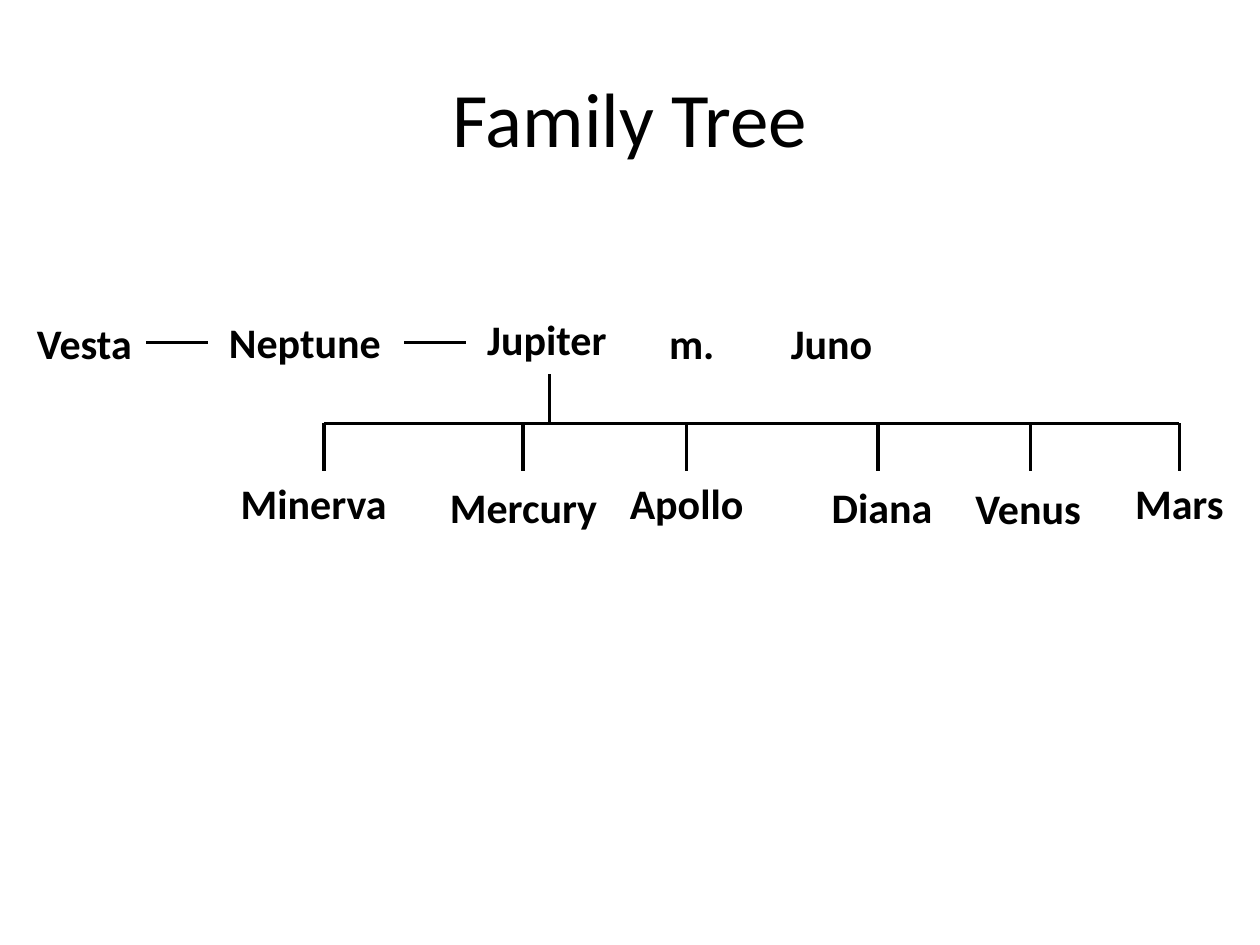
from dataclasses import dataclass

from lxml import etree
from pptx import Presentation
from pptx.dml.color import RGBColor
from pptx.enum.shapes import MSO_CONNECTOR
from pptx.enum.text import MSO_ANCHOR, MSO_AUTO_SIZE, PP_ALIGN
from pptx.oxml.ns import qn
from pptx.util import Inches, Pt

LINE = MSO_CONNECTOR.STRAIGHT
TOP, MIDDLE = MSO_ANCHOR.TOP, MSO_ANCHOR.MIDDLE
CENTER = PP_ALIGN.CENTER
GROW = MSO_AUTO_SIZE.SHAPE_TO_FIT_TEXT


@dataclass(frozen=True)
class Theme:
    font: str = "Calibri"
    ink: RGBColor = RGBColor(0, 0, 0)
    title: int = 44
    name: int = 24
    rule: int = 2


THEME = Theme()
WIDE, HIGH = 10, 7.5

# Content: name, left, top, width of its label
TITLE = "Family Tree"
ELDERS = [
    ("Vesta", 0, 2.47, 1.34),
    ("Neptune", 1.65, 2.46, 1.54),
    ("Jupiter", 3.67, 2.44, 1.34),
    ("m.", 4.82, 2.47, 1.34),
    ("Juno", 5.93, 2.47, 1.34),
]
# The last number is where the child's branch drops from the bar
CHILDREN = [
    ("Minerva", 1.73, 3.74, 1.52, 2.57),
    ("Mercury", 3.37, 3.77, 1.57, 4.15),
    ("Apollo", 4.78, 3.74, 1.34, 5.45),
    ("Diana", 6.33, 3.77, 1.34, 6.97),
    ("Venus", 7.49, 3.78, 1.34, 8.18),
    ("Mars", 8.69, 3.74, 1.34, 9.36),
]

# Levels of the tree
LABEL = 0.5
ELDER_Y, STEM_Y, BAR_Y, CHILD_Y = 2.72, 2.97, 3.36, 3.74
STEM_X = 4.36
TIES, TIE = (1.16, 3.21), 0.49

deck = Presentation()
deck.slide_width, deck.slide_height = Inches(WIDE), Inches(HIGH)
slide = deck.slides.add_slide(deck.slide_layouts[6])


def write(text, left, top, width, height=LABEL, size=THEME.name,
          bold=True, anchor=TOP, fit=GROW):
    box = slide.shapes.add_textbox(*map(Inches, (left, top, width, height)))
    frame = box.text_frame
    frame.word_wrap = True
    frame.vertical_anchor = anchor
    if fit is not None:
        frame.auto_size = fit
    par = frame.paragraphs[0]
    par.alignment = CENTER
    run = par.add_run()
    run.text = text
    font = run.font
    font.name, font.size, font.bold = THEME.font, Pt(size), bold
    font.color.rgb = THEME.ink


def draw(x1, y1, x2, y2):
    line = slide.shapes.add_connector(LINE, *map(Inches, (x1, y1, x2, y2)))
    line.line.color.rgb = THEME.ink
    line.line.width = Pt(THEME.rule)
    props = line.element.find(qn("p:spPr"))
    etree.SubElement(props, qn("a:effectLst"))


# Title
write(TITLE, WIDE * 0.05, HIGH * 0.04, WIDE * 0.9, 1.25,
      size=THEME.title, bold=False, anchor=MIDDLE, fit=None)

# Names
for name, left, top, width in ELDERS:
    write(name, left, top, width)
for name, left, top, width, drop in CHILDREN:
    write(name, left, top, width)

# Ties between siblings
for x in TIES:
    draw(x, ELDER_Y, x + TIE, ELDER_Y)

# Stem, bar and branches
drops = [child[-1] for child in CHILDREN]
draw(STEM_X, STEM_Y, STEM_X, BAR_Y)
draw(drops[0], BAR_Y, drops[-1], BAR_Y)
for x in drops:
    draw(x, BAR_Y, x, CHILD_Y)

deck.save("out.pptx")
